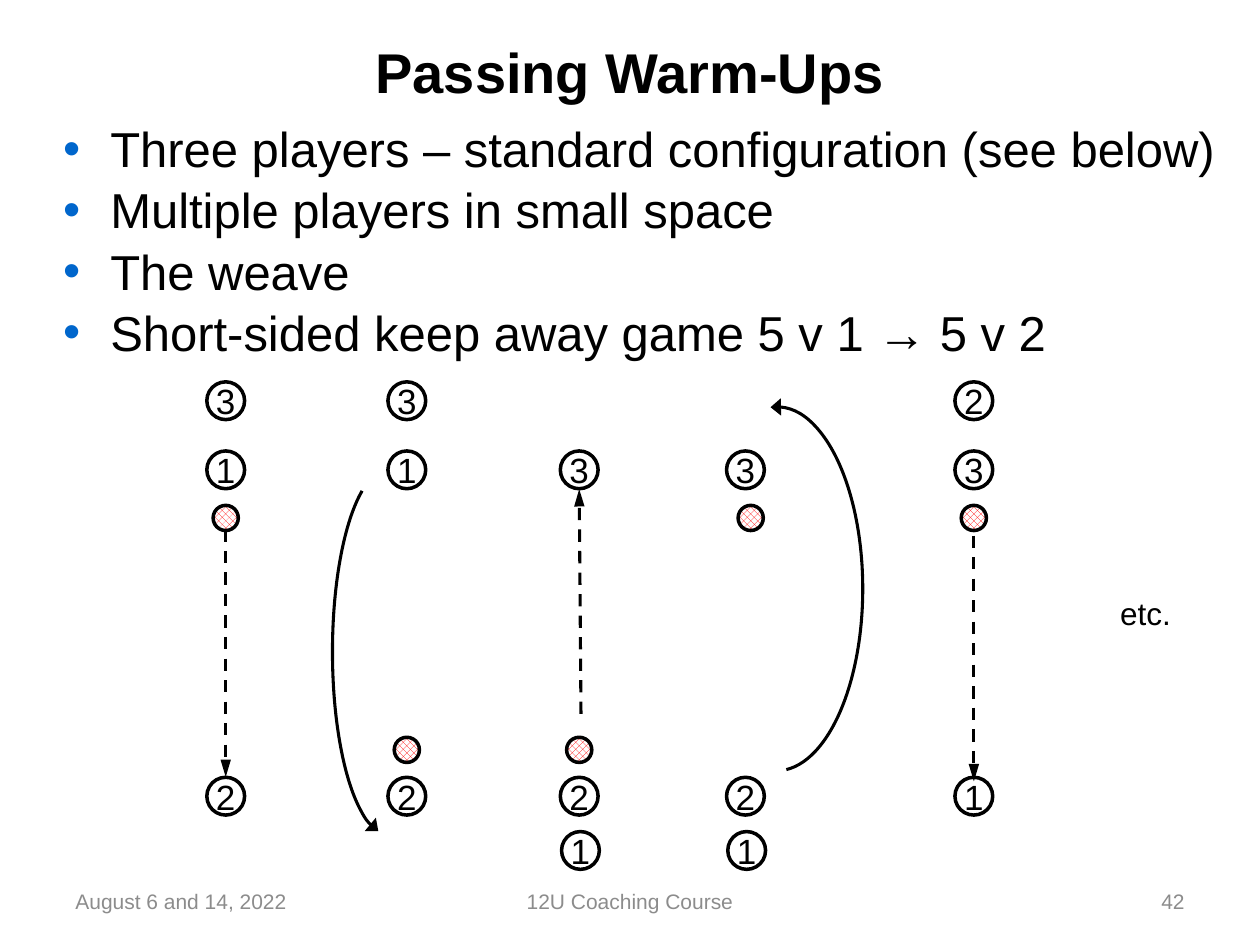
from pptx import Presentation
from pptx.dml.color import RGBColor
from pptx.enum.dml import MSO_LINE, MSO_PATTERN
from pptx.enum.shapes import MSO_CONNECTOR, MSO_SHAPE
from pptx.enum.text import MSO_ANCHOR, PP_ALIGN
from pptx.oxml.ns import qn
from pptx.util import Pt
from lxml import etree

LEFT, CENTER, RIGHT = PP_ALIGN.LEFT, PP_ALIGN.CENTER, PP_ALIGN.RIGHT
TOP, MIDDLE = MSO_ANCHOR.TOP, MSO_ANCHOR.MIDDLE

BLACK, WHITE, RED, GRAY, BLUE = "000000", "FFFFFF", "FF0000", "8C8C8C", "0066CC"
FONT = "Arial"
PLAYER_SIZE, BALL_SIZE = 21.6, 14.4
PLAIN = (0, 0, 0, 0)
PADDED = (7.2, 3.6, 7.2, 3.6)

TITLE = "Passing Warm-Ups"
BULLETS = [
    "Three players – standard configuration (see below)",
    "Multiple players in small space",
    "The weave",
    "Short-sided keep away game 5 v 1 → 5 v 2",
]
FOOTERS = [  # text, left, width, alignment
    ("August 6 and 14, 2022", 36, 168, LEFT),
    ("12U Coaching Course", 246, 228, CENTER),
    ("42", 516, 168, RIGHT),
]

# Centre heights of the rows of players and of the balls
ROWS = {"back": 229, "front": 268.5, "far": 455, "far back": 486}
BALL_ROWS = {"near": 296, "far": 428.5}
STAGES = [  # centre, players by row, ball row, ball shift
    (129, {"back": "3", "front": "1", "far": "2"}, "near", 0),
    (232.5, {"back": "3", "front": "1", "far": "2"}, "far", 0),
    (331, {"front": "3", "far": "2", "far back": "1"}, "far", 0),
    (426, {"front": "3", "far": "2", "far back": "1"}, "near", 3),
    (556.5, {"back": "2", "front": "3", "far": "1"}, "near", 0),
]
FAR_BACK_SHIFT = 0.7
PASSES = [  # from, to
    ((129, 302.5), (129, 444)),
    ((332, 408), (331, 279.5)),
    ((556.5, 306), (556.5, 446.5)),
]
RUNS = [  # left, top, width, height, arc start and end, arrow end, flipped
    (190, 268.5, 63.5, 208, (167.49, 52.14), "tailEnd", True),
    (394.5, 232.5, 98.5, 208, (160.86, 52.14), "headEnd", False),
]


def rgb(value):
    return RGBColor.from_string(value)


def write(shape, lines, size, color=BLACK, bold=False, align=LEFT, anchor=MIDDLE,
          insets=PLAIN, wrap=True, bullet=None, spacing=None):
    frame = shape.text_frame
    frame.word_wrap = wrap
    frame.vertical_anchor = anchor
    frame.margin_left, frame.margin_top, frame.margin_right, frame.margin_bottom = map(Pt, insets)
    for index, line in enumerate(lines):
        para = frame.paragraphs[0] if index == 0 else frame.add_paragraph()
        para.alignment = align
        if spacing:
            para.line_spacing = spacing
        if bullet:
            add_bullet(para, bullet)
        span = para.add_run()
        span.text = line
        span.font.name, span.font.size, span.font.bold = FONT, Pt(size), bold
        span.font.color.rgb = rgb(color)


def add_bullet(para, color):
    properties = para._p.get_or_add_pPr()
    properties.set("marL", str(Pt(27)))
    properties.set("indent", str(Pt(-27)))
    tint = etree.SubElement(properties, qn("a:buClr"))
    etree.SubElement(tint, qn("a:srgbClr"), val=color)
    etree.SubElement(properties, qn("a:buFont"), typeface=FONT)
    etree.SubElement(properties, qn("a:buChar"), char="•")


def add_text(slide, lines, left, top, width, height, **style):
    box = slide.shapes.add_textbox(Pt(left), Pt(top), Pt(width), Pt(height))
    write(box, lines, **style)


def set_line(shape, width):
    shape.line.color.rgb = rgb(BLACK)
    shape.line.width = Pt(width)


def add_arrowhead(shape, end, width, length):
    outline = shape.element.spPr.find(qn("a:ln"))
    etree.SubElement(outline, qn(f"a:{end}"), type="triangle", w=width, len=length)


def add_circle(slide, x, y, size):
    """Add an unfilled circle centred on x, y."""
    circle = slide.shapes.add_shape(MSO_SHAPE.FLOWCHART_CONNECTOR, Pt(x - size / 2),
                                    Pt(y - size / 2), Pt(size), Pt(size))
    circle.shadow.inherit = False
    circle.fill.background()
    set_line(circle, 2)
    return circle


def add_ball(slide, x, y):
    fill = add_circle(slide, x, y, BALL_SIZE).fill
    fill.patterned()
    fill.pattern = MSO_PATTERN.LARGE_CHECKER_BOARD
    fill.fore_color.rgb, fill.back_color.rgb = rgb(RED), rgb(WHITE)


def add_pass(slide, start, end):
    arrow = slide.shapes.add_connector(MSO_CONNECTOR.STRAIGHT, *map(Pt, start + end))
    set_line(arrow, 1.75)
    arrow.line.dash_style = MSO_LINE.DASH
    add_arrowhead(arrow, "tailEnd", "med", "lg")
    etree.SubElement(arrow.element.spPr, qn("a:effectLst"))


def add_player_run(slide, left, top, width, height, angles, end, flipped):
    arc = slide.shapes.add_shape(MSO_SHAPE.ARC, Pt(left), Pt(top), Pt(width), Pt(height))
    arc.shadow.inherit = False
    arc.fill.background()
    arc.adjustments[0], arc.adjustments[1] = angles
    set_line(arc, 1.75)
    add_arrowhead(arc, end, "lg", "med")
    if flipped:
        arc.element.spPr.find(qn("a:xfrm")).set("flipH", "1")


def main():
    deck = Presentation()
    deck.slide_width, deck.slide_height = Pt(720), Pt(540)
    slide = deck.slides.add_slide(deck.slide_layouts[6])

    add_text(slide, [TITLE], 36, 21.5, 648, 38, size=32, bold=True, align=CENTER)
    add_text(slide, BULLETS, 36, 66.5, 666, 156, size=28, anchor=TOP,
             bullet=BLUE, spacing=1.04)
    for text, left, width, align in FOOTERS:
        add_text(slide, [text], left, 500.5, width, 28.5, size=12, color=GRAY,
                 align=align, insets=PADDED)

    for x, players, ball_row, ball_shift in STAGES:
        for row, number in players.items():
            shift = FAR_BACK_SHIFT if row == "far back" else 0
            player = add_circle(slide, x + shift, ROWS[row], PLAYER_SIZE)
            write(player, [number], size=20, align=CENTER)
        add_ball(slide, x + ball_shift, BALL_ROWS[ball_row])
    for start, end in PASSES:
        add_pass(slide, start, end)
    for player_run in RUNS:
        add_player_run(slide, *player_run)
    add_text(slide, ["etc."], 633, 336, 44, 29, size=18, anchor=TOP,
             insets=PADDED, wrap=False)

    deck.save("out.pptx")


if __name__ == "__main__":
    main()
